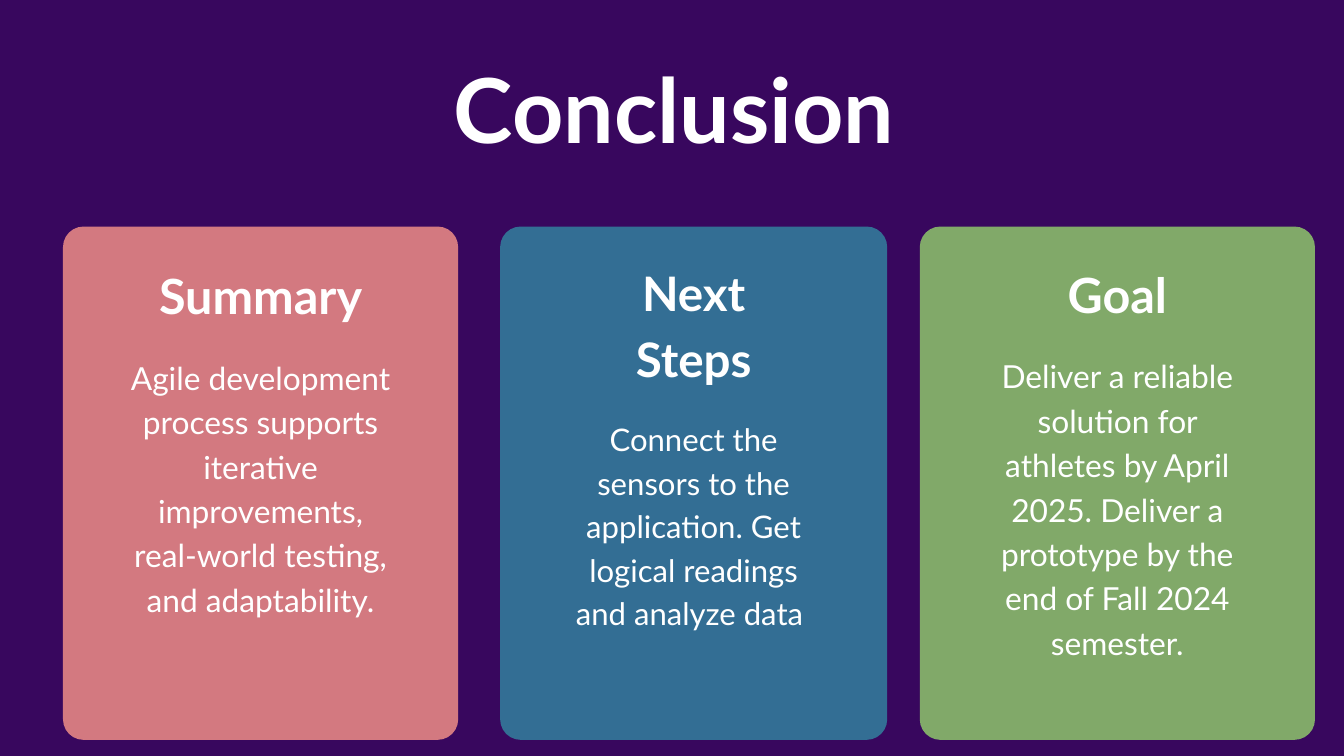
from pptx import Presentation
from pptx import util as u
from pptx.dml import color
from pptx.enum import shapes, text

PURPLE, WHITE = "38075E", "FFFFFF"
CARD_TOP, CARD_HEIGHT, CORNER = 242.7, 550, 22
HEADING_SHARE, BODY_SHARE = 0.573, 0.679

CARDS = [
    dict(left=67.5, width=423.4, fill="D37980",
         heading="Summary", heading_top=275, heading_height=68, heading_size=52,
         body="Agile development process supports iterative improvements, "
              "real-world testing, and adaptability.",
         body_top=377.3, body_height=375, body_size=34),
    dict(left=535.9, width=414.7, fill="336E94",
         heading="Next Steps", heading_top=272.2, heading_height=140, heading_size=50.9,
         body="Connect the sensors to the application. Get logical readings "
              "and analyze data ",
         body_top=444.2, body_height=230, body_size=33.3),
    dict(left=985.5, width=423.4, fill="81A969",
         heading="Goal", heading_top=273.6, heading_height=70, heading_size=52,
         body="Deliver a reliable solution for athletes by April 2025. Deliver a "
              "prototype by the end of Fall 2024 semester.",
         body_top=375.8, body_height=329, body_size=34),
]


def rgb(value):
    return color.RGBColor.from_string(value)


class SlideBuilder:
    font = "Lato"
    ink = WHITE

    def __init__(self, deck, background):
        self.page = deck.slides.add_slide(deck.slide_layouts[5])
        fill = self.page.background.fill
        fill.solid()
        fill.fore_color.rgb = rgb(background)

    def set_text(self, box, words, size, leading, bold):
        frame = box.text_frame
        frame.word_wrap = True
        frame.auto_size = text.MSO_AUTO_SIZE.NONE
        frame.vertical_anchor = text.MSO_ANCHOR.TOP
        frame.margin_left = frame.margin_right = 0
        frame.margin_top = frame.margin_bottom = 0
        para = frame.paragraphs[0]
        para.alignment = text.PP_ALIGN.CENTER
        para.line_spacing = u.Pt(round(size * leading, 1))
        span = para.add_run()
        span.text = words
        span.font.name = self.font
        span.font.size = u.Pt(size)
        span.font.bold = bold
        span.font.color.rgb = rgb(self.ink)

    def title(self, words, left, top, width, height, size):
        box = self.page.shapes.title
        box.left, box.top = u.Pt(left), u.Pt(top)
        box.width, box.height = u.Pt(width), u.Pt(height)
        self.set_text(box, words, size, 1.2, True)

    def panel(self, left, top, width, height, fill):
        box = self.page.shapes.add_shape(
            shapes.MSO_SHAPE.ROUNDED_RECTANGLE,
            u.Pt(left), u.Pt(top), u.Pt(width), u.Pt(height))
        box.adjustments[0] = CORNER / min(width, height)
        box.shadow.inherit = False
        box.fill.solid()
        box.fill.fore_color.rgb = rgb(fill)
        box.line.fill.background()

    def label(self, words, center, top, width, height, size, bold=False):
        box = self.page.shapes.add_textbox(
            u.Pt(center - width / 2), u.Pt(top), u.Pt(width), u.Pt(height))
        self.set_text(box, words, size, 1.4, bold)

    def card(self, card):
        left, width = card["left"], card["width"]
        center = left + width / 2
        self.panel(left, CARD_TOP, width, CARD_HEIGHT, card["fill"])
        self.label(card["heading"], center, card["heading_top"], width * HEADING_SHARE,
                   card["heading_height"], card["heading_size"], bold=True)
        self.label(card["body"], center, card["body_top"], width * BODY_SHARE,
                   card["body_height"], card["body_size"])


def main():
    deck = Presentation()
    deck.slide_width, deck.slide_height = u.Pt(1440), u.Pt(810)
    builder = SlideBuilder(deck, PURPLE)
    builder.title("Conclusion", 54.5, 57.6, 1335.6, 114.5, 96)
    for card in CARDS:
        builder.card(card)
    deck.save("out.pptx")


if __name__ == "__main__":
    main()
